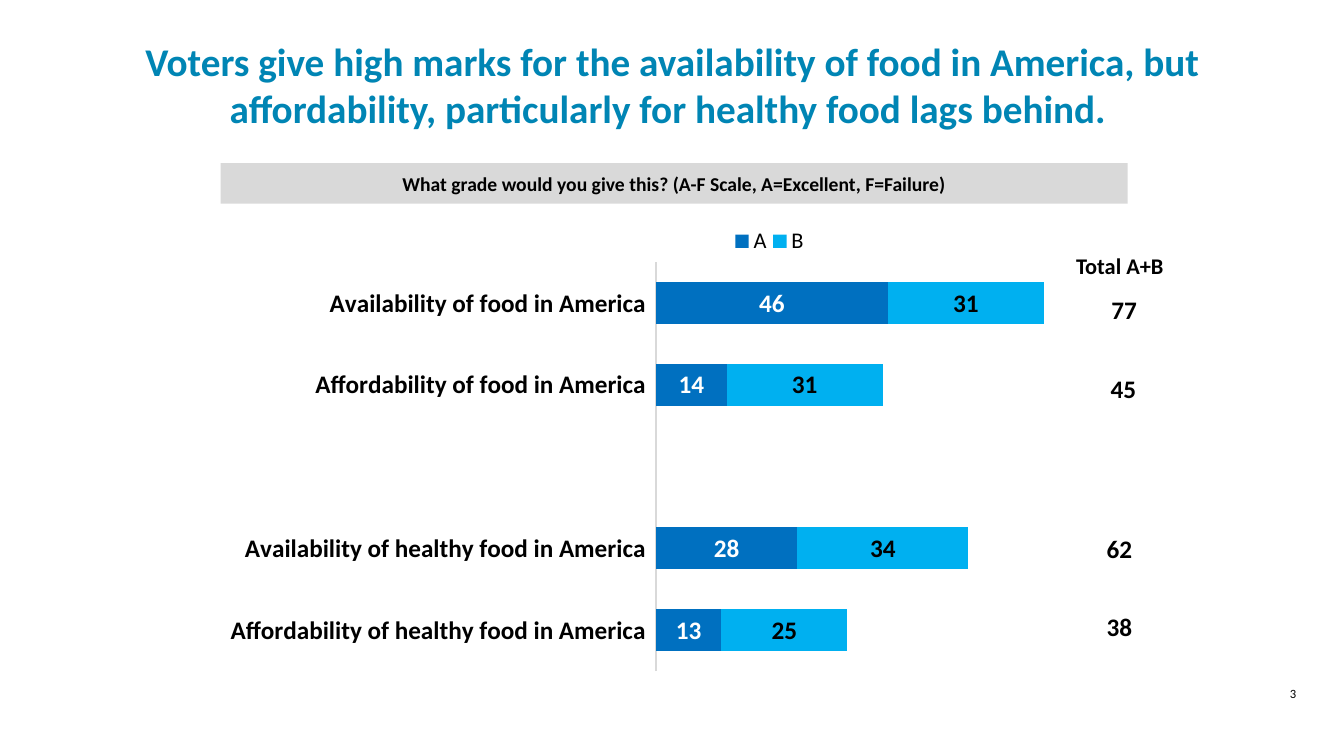
from lxml import etree
from pptx import Presentation
from pptx.chart.data import CategoryChartData
from pptx.dml.color import RGBColor
from pptx.enum.chart import XL_CHART_TYPE, XL_LABEL_POSITION, XL_LEGEND_POSITION, XL_TICK_LABEL_POSITION, XL_TICK_MARK
from pptx.enum.shapes import MSO_SHAPE
from pptx.enum.text import MSO_ANCHOR, MSO_AUTO_SIZE, PP_ALIGN
from pptx.oxml import parse_xml
from pptx.oxml.ns import nsdecls
from pptx.util import Cm, Pt

TITLE_BLUE = RGBColor(0x00, 0x85, 0xB4)
DARK_BLUE = RGBColor(0x00, 0x70, 0xC0)
LIGHT_BLUE = RGBColor(0x00, 0xB0, 0xF0)
GREY = RGBColor(0xD9, 0xD9, 0xD9)
BLACK = RGBColor(0, 0, 0)
WHITE = RGBColor(0xFF, 0xFF, 0xFF)


def style(font, size, color=BLACK, bold=True):
    font.name = "Calibri"
    font.size = Pt(size)
    font.bold = bold
    font.color.rgb = color


def write(sp, text, size, color=BLACK, bold=True, align=PP_ALIGN.CENTER, wrap=True):
    tf = sp.text_frame
    tf.word_wrap = wrap
    p = tf.paragraphs[0]
    p.alignment = align
    r = p.add_run()
    r.text = text
    style(r.font, size, color, bold)


prs = Presentation()
prs.slide_width, prs.slide_height = Cm(33.87), Cm(19.05)
s = prs.slides.add_slide(prs.slide_layouts.get_by_name("Title Only"))

# Title
title = s.shapes.title
title.left, title.top, title.width, title.height = Cm(2.51), Cm(0.64), Cm(28.85), Cm(2.95)
title.text_frame.auto_size = MSO_AUTO_SIZE.NONE
title.text_frame.vertical_anchor = MSO_ANCHOR.MIDDLE
write(title, "Voters give high marks for the availability of food in America, but "
      "affordability, particularly for healthy food lags behind. ", 28, TITLE_BLUE)

# Slide number
number = s.shapes.add_textbox(Cm(31.32), Cm(17.15), Cm(2.54), Cm(0.84))
write(number, "3", 9, bold=False)

# Question bar
bar = s.shapes.add_shape(MSO_SHAPE.RECTANGLE, Cm(5.56), Cm(4.11), Cm(22.86), Cm(1.02))
bar.shadow.inherit = False
bar.fill.solid()
bar.fill.fore_color.rgb = GREY
bar.line.fill.background()
bar.text_frame.vertical_anchor = MSO_ANCHOR.MIDDLE
write(bar, "What grade would you give this? (A-F Scale, A=Excellent, F=Failure)", 14)

# Stacked bar chart of grades
data = CategoryChartData()
data.categories = [
    "Affordability of healthy food in America",
    "Availability of healthy food in America",
    "",
    "Affordability of food in America",
    "Availability of food in America",
]
data.add_series("A", (13, 28, None, 14, 46))
data.add_series("B", (25, 34, None, 31, 31))
chart = s.shapes.add_chart(XL_CHART_TYPE.BAR_STACKED, Cm(5.56), Cm(5.31),
                           Cm(22.86), Cm(11.84), data).chart
chart.has_title = False
style(chart.font, 10, bold=False)

plot = chart.plots[0]
plot.gap_width = 94
plot.overlap = 100
plot.vary_by_categories = False
for series, fill, label_color in zip(plot.series, (DARK_BLUE, LIGHT_BLUE), (WHITE, BLACK)):
    series.format.fill.solid()
    series.format.fill.fore_color.rgb = fill
    labels = series.data_labels
    labels.show_value = True
    labels.position = XL_LABEL_POSITION.CENTER
    style(labels.font, 18, label_color)

axis = chart.category_axis
axis.major_tick_mark = axis.minor_tick_mark = XL_TICK_MARK.NONE
axis.tick_label_position = XL_TICK_LABEL_POSITION.LOW
axis.format.line.color.rgb = GREY
axis.format.line.width = Pt(0.75)
style(axis.tick_labels.font, 18)
values = chart.value_axis
values.minimum_scale, values.maximum_scale = 0, 90
values.has_major_gridlines = False
values.visible = False

chart.has_legend = True
legend = chart.legend
legend.position = XL_LEGEND_POSITION.TOP
legend.include_in_layout = False
style(legend.font, 16, bold=False)

# Fixed places for the plot area and the legend
for tag, target, box in (
    ("plotArea", "inner", (0.48, 0.11, 0.5, 0.87)),
    ("legend", None, (0.56, 0.03, 0.09, 0.07)),
):
    part = chart.element.find(".//{*}" + tag)
    for old in part.findall("{*}layout"):
        part.remove(old)
    layout = parse_xml(f"<c:layout {nsdecls('c')}><c:manualLayout/></c:layout>")
    settings = [("layoutTarget", target)] if target else []
    settings += [("xMode", "edge"), ("yMode", "edge"), *zip("xywh", box)]
    for name, val in settings:
        ns = etree.QName(layout).namespace
        etree.SubElement(layout[0], f"{{{ns}}}{name}").set("val", str(val))
    part.insert(0 if tag == "plotArea" else 1, layout)

# Totals column
for total, left, top in (("77", 27.76, 7.29), ("45", 27.74, 9.27),
                         ("62", 27.64, 13.31), ("38", 27.64, 15.29)):
    write(s.shapes.add_textbox(Cm(left), Cm(top), Cm(1.24), Cm(1.02)), total, 18,
          align=PP_ALIGN.LEFT)
heading = s.shapes.add_textbox(Cm(26.87), Cm(6.22), Cm(2.74), Cm(0.94))
write(heading, "Total A+B", 16, align=PP_ALIGN.LEFT, wrap=False)

prs.save("out.pptx")
